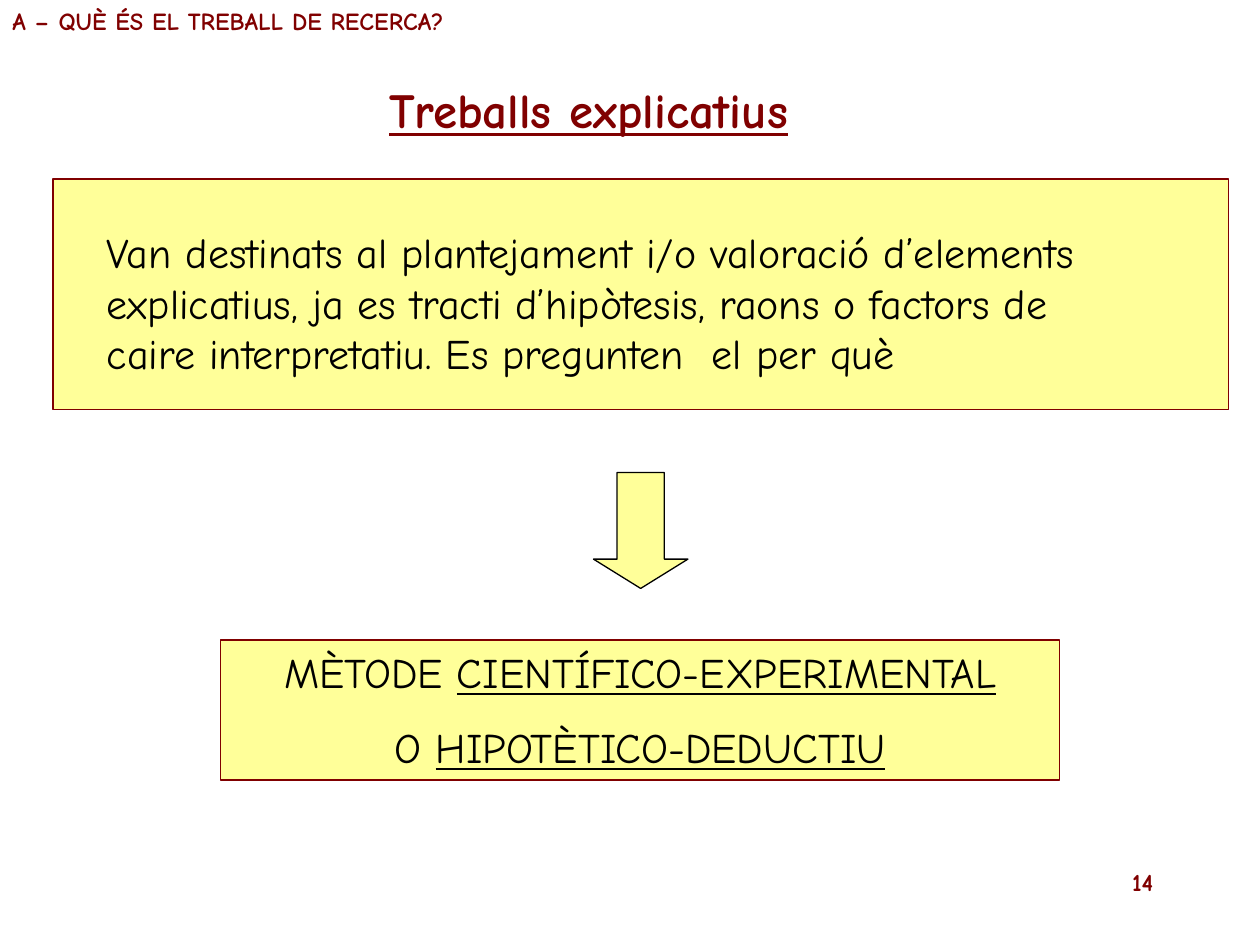
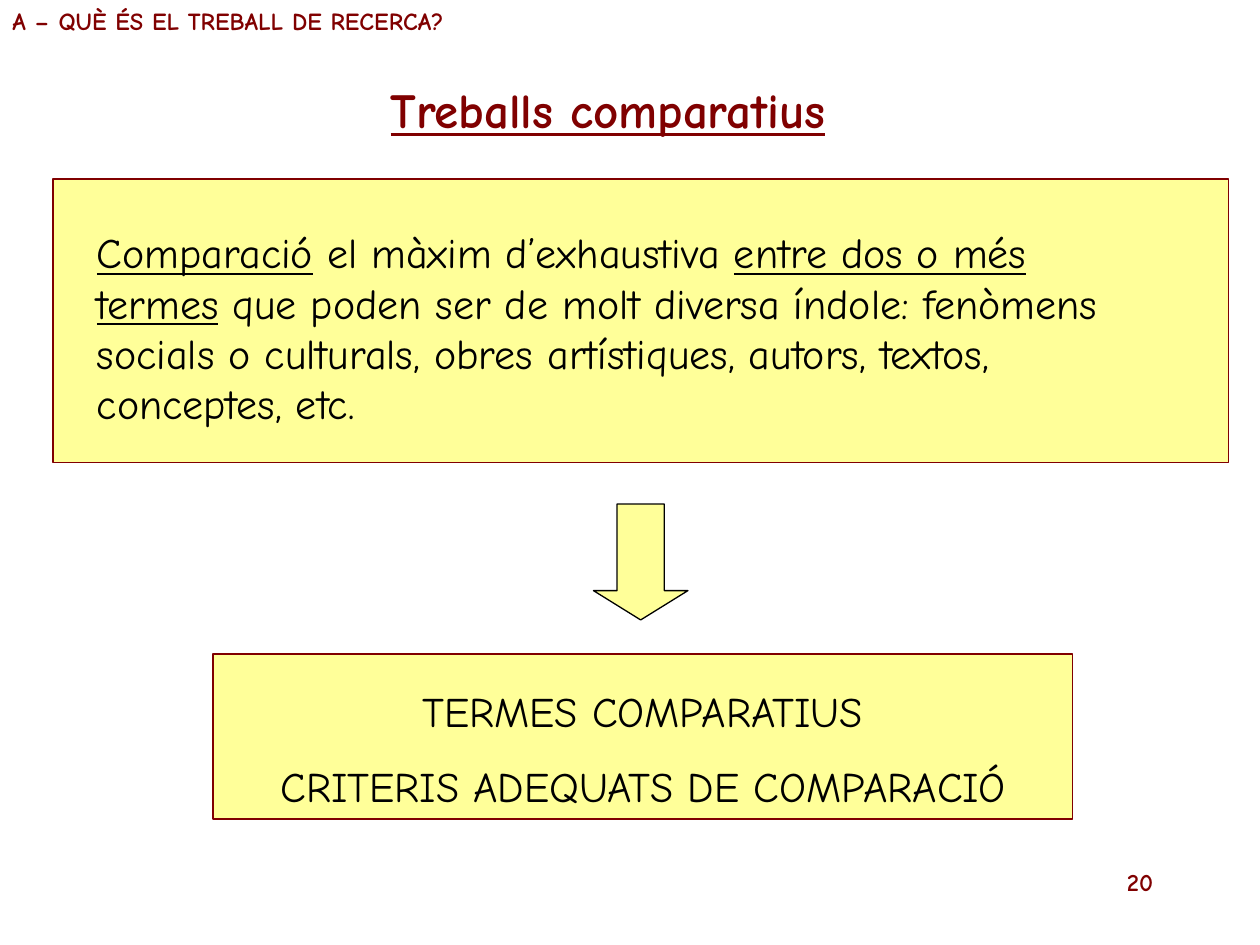
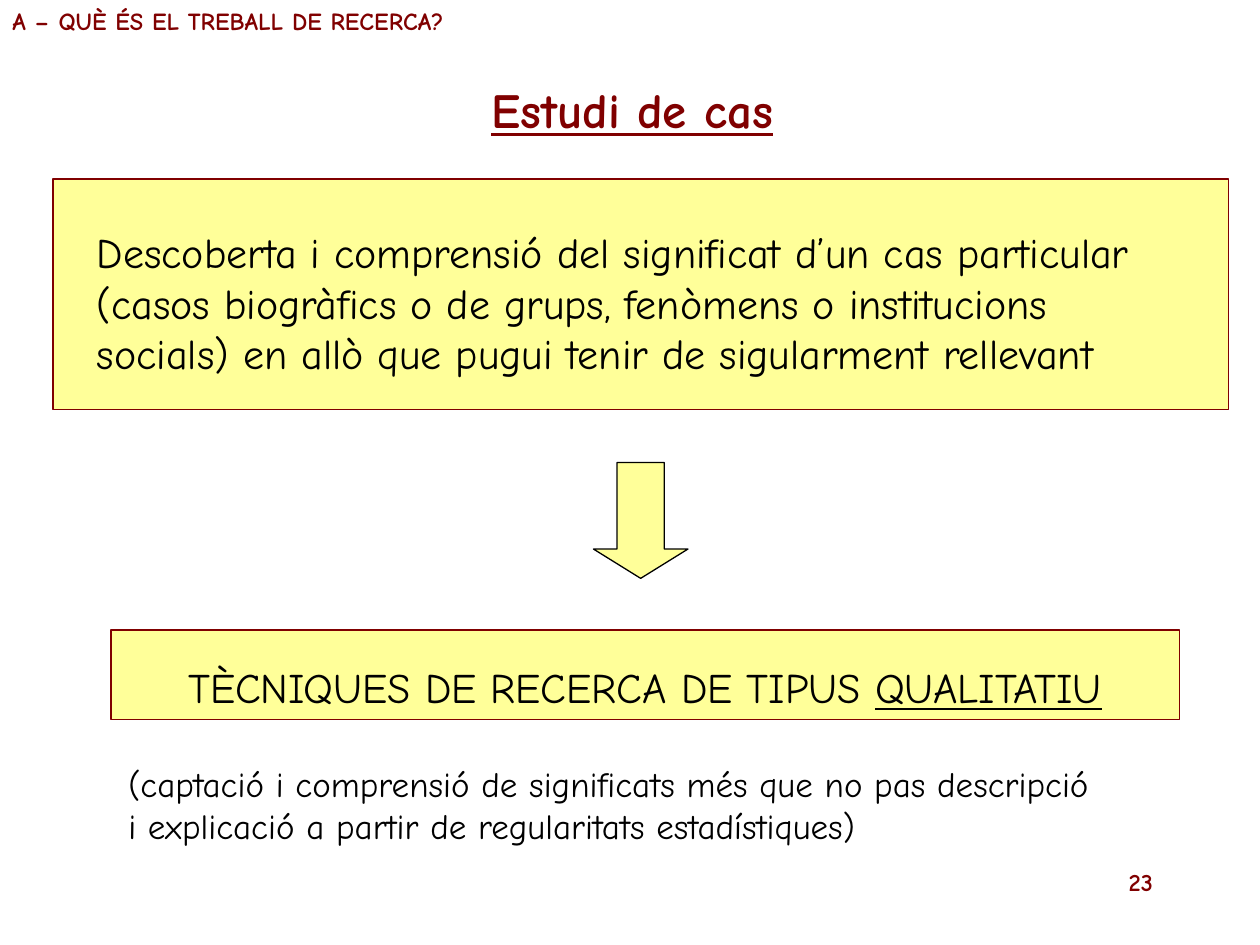
import pptx
import pptx.util
import pptx.dml.color
import pptx.enum.shapes
import pptx.enum.text

Inches = pptx.util.Inches
Pt = pptx.util.Pt
SHAPE = pptx.enum.shapes.MSO_SHAPE
ALIGN = pptx.enum.text.PP_ALIGN

FONT = "Comic Neue"
MAROON, YELLOW, BLACK = "800000", "FFFF99", "000000"
SECTION = "A – QUÈ ÉS EL TREBALL DE RECERCA?"
WIDTH, HEIGHT = 10, 7.5
PANEL_LEFT, PANEL_TOP, PANEL_WIDTH = 0.42, 1.42, 9.33
TEXT_TOP = 1.75
ARROW_WIDTH, ARROW_HEIGHT = 0.75, 0.92

# Underscores enclose underlined words; each method line has its line spacing.
slides = [
    dict(number="14", title="Treballs explicatius", title_box=(2.99, 3.9),
         panel_height=1.83, text_left=0.75, arrow_top=3.75,
         body=["Van destinats al plantejament i/o valoració d’elements",
               "explicatius, ja es tracti d’hipòtesis, raons o factors de",
               "caire interpretatiu. Es pregunten  el per què"],
         method_box=(1.75, 5.08, 6.66, 1.11),
         method=["MÈTODE _CIENTÍFICO-EXPERIMENTAL_", "O _HIPOTÈTICO-DEDUCTIU_"],
         spacing=[1, 1.5], note=[]),
    dict(number="20", title="Treballs comparatius", title_box=(3, 4.15),
         panel_height=2.25, text_left=0.67, arrow_top=4,
         body=["_Comparació_ el màxim d’exhaustiva _entre dos o més_",
               "_termes_ que poden ser de molt diversa índole: fenòmens",
               "socials o culturals, obres artístiques, autors, textos,",
               "conceptes, etc."],
         method_box=(1.69, 5.19, 6.82, 1.31),
         method=["TERMES COMPARATIUS", "CRITERIS ADEQUATS DE COMPARACIÓ"],
         spacing=[1.5, 1.5], note=[]),
    dict(number="23", title="Estudi de cas", title_box=(3.8, 2.77),
         panel_height=1.83, text_left=0.67, arrow_top=3.67,
         body=["Descoberta i comprensió del significat d’un cas particular",
               "(casos biogràfics o de grups, fenòmens o institucions",
               "socials) en allò que pugui tenir de sigularment rellevant"],
         method_box=(0.88, 5, 8.48, 0.71),
         method=["TÈCNIQUES DE RECERCA DE TIPUS _QUALITATIU_"],
         spacing=[1.5],
         note=["(captació i comprensió de significats més que no pas descripció",
               "i explicació a partir de regularitats estadístiques)"]),
]


def write(sp, lines, size, color=BLACK, bold=False, align=ALIGN.LEFT, spacing=None):
    """Fill a shape with one paragraph per line, underlining the _marked_ words."""
    tf = sp.text_frame
    tf.word_wrap = True
    tf.auto_size = pptx.enum.text.MSO_AUTO_SIZE.NONE
    tf.vertical_anchor = pptx.enum.text.MSO_ANCHOR.TOP
    for i, line in enumerate(lines):
        p = tf.add_paragraph() if i else tf.paragraphs[0]
        p.alignment = align
        if spacing:
            p.line_spacing = float(spacing[i])
        for j, part in enumerate(line.split("_")):
            if part:
                r = p.add_run()
                r.text = part
                r.font.name, r.font.size, r.font.bold = FONT, Pt(size), bold
                r.font.underline = j % 2 == 1
                r.font.color.rgb = pptx.dml.color.RGBColor.from_string(color)


def add_block(s, kind, box, line_color=MAROON):
    """Add a yellow shape with a thin outline."""
    sp = s.shapes.add_shape(kind, *map(Inches, box))
    sp.shadow.inherit = False
    sp.fill.solid()
    sp.fill.fore_color.rgb = pptx.dml.color.RGBColor.from_string(YELLOW)
    sp.line.color.rgb = pptx.dml.color.RGBColor.from_string(line_color)
    sp.line.width = Pt(0.75)
    return sp


prs = pptx.Presentation()
prs.slide_width, prs.slide_height = Inches(WIDTH), Inches(HEIGHT)
title_only = prs.slide_layouts[5]

for data in slides:
    s = prs.slides.add_slide(title_only)

    title = s.shapes.title
    left, width = data["title_box"]
    title.left, title.top = Inches(left), Inches(0.58)
    title.width, title.height = Inches(width), Inches(0.57)
    write(title, [f"_{data['title']}_"], 28, MAROON, True)

    number = s.shapes.add_textbox(Inches(7.17), Inches(6.83), Inches(2.08), Inches(0.5))
    write(number, [data["number"]], 14, MAROON, True, ALIGN.RIGHT)

    section = s.shapes.add_textbox(0, 0, Inches(4.06), Inches(0.33))
    write(section, [SECTION], 14, MAROON, True)

    panel_height = data["panel_height"]
    add_block(s, SHAPE.RECTANGLE, (PANEL_LEFT, PANEL_TOP, PANEL_WIDTH, panel_height))
    body = s.shapes.add_textbox(Inches(data["text_left"]), Inches(TEXT_TOP),
                                Inches(9.09), Inches(0.1 + 0.4 * len(data["body"])))
    write(body, data["body"], 24)

    method = add_block(s, SHAPE.RECTANGLE, data["method_box"])
    write(method, data["method"], 24, align=ALIGN.CENTER, spacing=data["spacing"])

    arrow_left = PANEL_LEFT + (PANEL_WIDTH - ARROW_WIDTH) / 2
    arrow = add_block(s, SHAPE.DOWN_ARROW,
                      (arrow_left, data["arrow_top"], ARROW_WIDTH, ARROW_HEIGHT), BLACK)
    arrow.adjustments[0], arrow.adjustments[1] = 0.5, 0.31

    if data["note"]:
        note = s.shapes.add_textbox(Inches(0.92), Inches(6), Inches(8.3), Inches(0.77))
        write(note, data["note"], 20)

prs.save("out.pptx")
